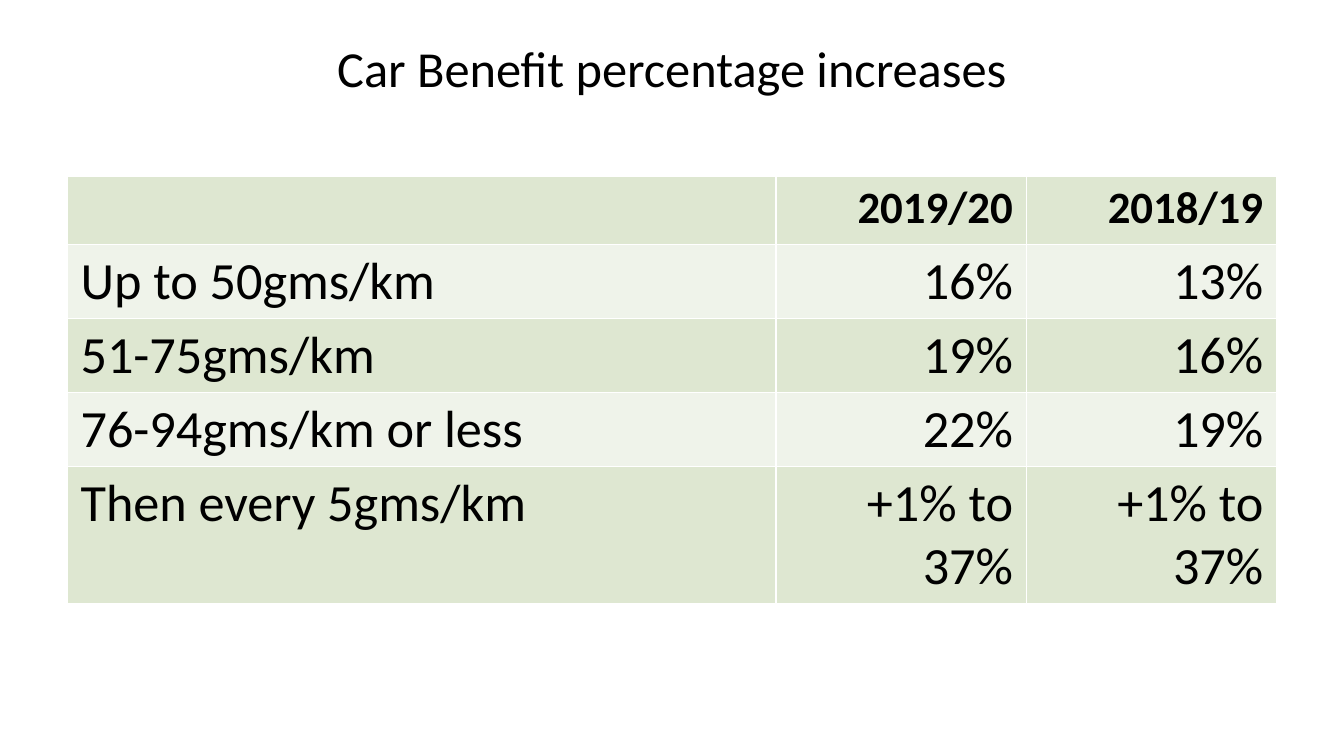
from lxml.etree import SubElement
from pptx import Presentation
from pptx.dml.color import RGBColor
from pptx.enum.text import MSO_ANCHOR as Anchor, PP_ALIGN as Align
from pptx.oxml.ns import qn
from pptx.util import Pt

EMU_PER_PX = 5715
FONT = "Calibri"
BLACK = "000000"
WHITE = "FFFFFF"
BANDS = ("DEE7D1", "EFF3EA")
COLUMN_WIDTHS = (844, 298, 298)
ROW_HEIGHTS = (81, 81, 81, 81, 155)
ROWS = (
    ("", "2019/20", "2018/19"),
    ("Up to 50gms/km", "16%", "13%"),
    ("51-75gms/km", "19%", "16%"),
    ("76-94gms/km or less", "22%", "19%"),
    ("Then every 5gms/km", "+1% to 37%", "+1% to 37%"),
)


def px(length):
    return length * EMU_PER_PX


def color(value):
    return RGBColor.from_string(value)


def write_text(frame, text, size=28, bold=False, align=Align.LEFT):
    paragraph = frame.paragraphs[0]
    paragraph.alignment = align
    run = paragraph.add_run()
    run.text = text
    run.font.name = FONT
    run.font.size = Pt(size)
    run.font.bold = bold
    run.font.color.rgb = color(BLACK)


def add_title(slide, text, left, top, width, height):
    title = slide.shapes.title
    title.left, title.top = px(left), px(top)
    title.width, title.height = px(width), px(height)
    title.text_frame.word_wrap = True
    title.text_frame.vertical_anchor = Anchor.TOP
    write_text(title.text_frame, text, size=27, align=Align.CENTER)


def add_borders(cell):
    properties = cell._tc.get_or_add_tcPr()
    for side in ("lnL", "lnR", "lnT", "lnB"):
        line = SubElement(properties, qn(f"a:{side}"), w=str(Pt(1)))
        fill = SubElement(line, qn("a:solidFill"))
        SubElement(fill, qn("a:srgbClr"), val=WHITE)


def format_cell(cell, fill):
    cell.margin_left = cell.margin_right = px(16)
    cell.margin_top = cell.margin_bottom = px(6)
    add_borders(cell)
    cell.fill.solid()
    cell.fill.fore_color.rgb = color(fill)


def add_benefit_table(slide, left, top, width, height):
    frame = slide.shapes.add_table(
        len(ROWS), len(COLUMN_WIDTHS), px(left), px(top), px(width), px(height)
    )
    table = frame.table
    for column, column_width in zip(table.columns, COLUMN_WIDTHS):
        column.width = px(column_width)
    for row, row_height in zip(table.rows, ROW_HEIGHTS):
        row.height = px(row_height)
    for row_index, values in enumerate(ROWS):
        header = row_index == 0
        for column_index, value in enumerate(values):
            cell = table.cell(row_index, column_index)
            format_cell(cell, BANDS[row_index % 2])
            if value:
                write_text(
                    cell.text_frame,
                    value,
                    size=24 if header else 28,
                    bold=header,
                    align=Align.RIGHT if column_index else Align.LEFT,
                )


def main():
    presentation = Presentation()
    presentation.slide_width = px(1600)
    presentation.slide_height = px(900)
    slide = presentation.slides.add_slide(presentation.slide_layouts[5])
    add_title(slide, "Car Benefit percentage increases", 80, 36, 1440, 150)
    add_benefit_table(slide, 80, 210, sum(COLUMN_WIDTHS), sum(ROW_HEIGHTS))
    presentation.save("out.pptx")


if __name__ == "__main__":
    main()
